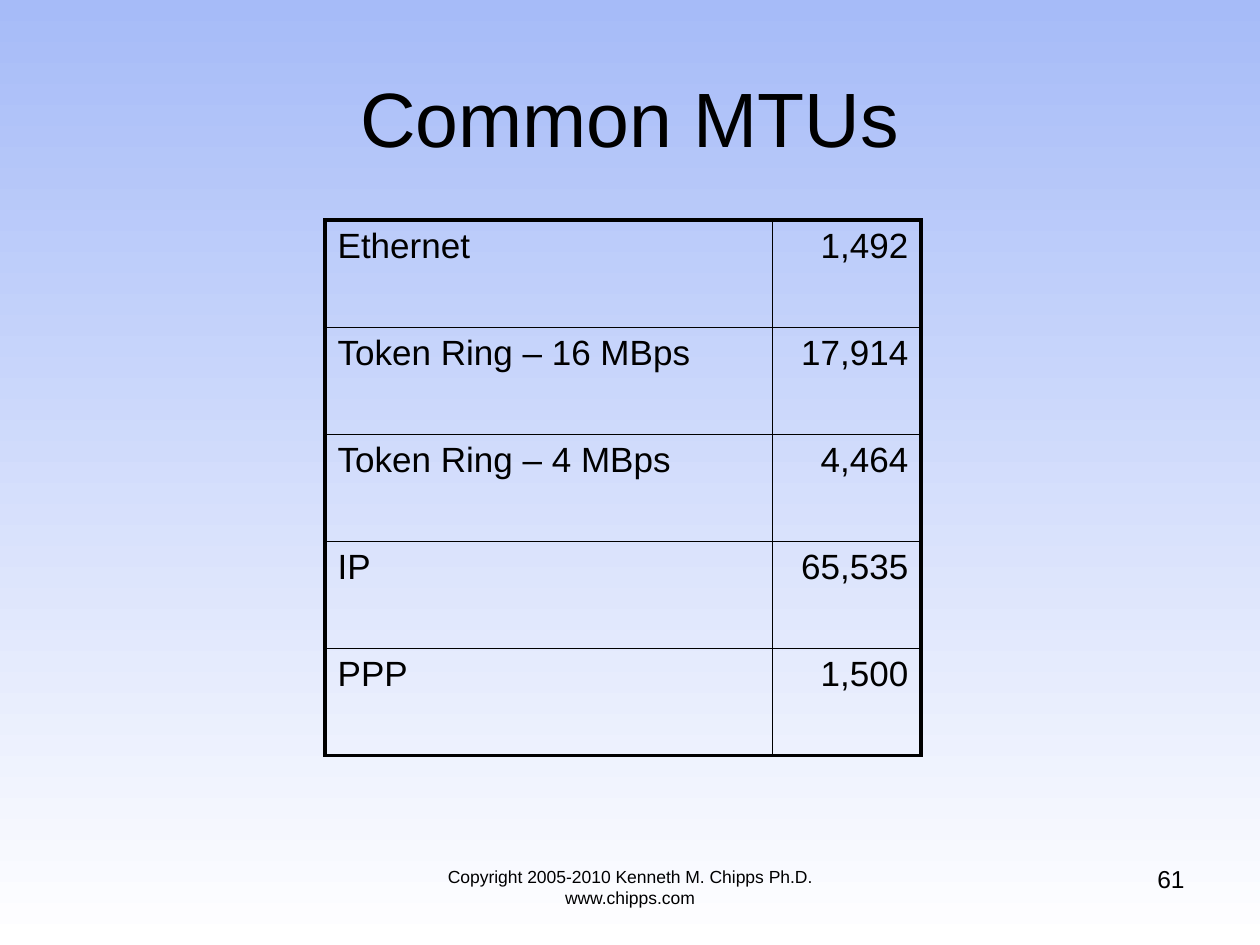
"""Build a slide with a bordered table of common MTU sizes."""
from typing import NamedTuple

from lxml.etree import SubElement as Sub
from pptx import Presentation
from pptx.dml.color import RGBColor as Rgb
from pptx.enum.text import MSO_ANCHOR as Anchor, MSO_AUTO_SIZE as Fit, PP_ALIGN as Align
from pptx.oxml.ns import qn
from pptx.util import Inches, Pt

COLORS = {"ink": "000000", "sky": "A6BBF8", "base": "FFFFFF"}
WIDE, HIGH = Inches(10), Inches(7.5)
THICK, THIN = 2.25, 1
COLS = (3.55, 1.18)
ROW = 0.85


class Box(NamedTuple):
    """Hold a frame as shares of the slide's size."""
    left: float
    top: float
    width: float
    height: float

    def size(self) -> tuple[int, ...]:
        return tuple(round(share * full) for share, full in zip(self, (WIDE, HIGH) * 2))


class Mtu(NamedTuple):
    """Pair a link type with its largest packet."""
    link: str
    bytes: str


class Note(NamedTuple):
    """Describe a line at the foot of the slide."""
    text: str
    box: Box
    size: int
    align: Align


MTUS = (
    Mtu("Ethernet", "1,492"),
    Mtu("Token Ring – 16 MBps", "17,914"),
    Mtu("Token Ring – 4 MBps", "4,464"),
    Mtu("IP", "65,535"),
    Mtu("PPP", "1,500"),
)
NOTES = (
    Note("Copyright 2005-2010 Kenneth M. Chipps Ph.D. www.chipps.com",
         Box(0.3, 0.91, 0.4, 0.07), 10, Align.CENTER),
    Note("61", Box(0.717, 0.908, 0.233, 0.07), 14, Align.RIGHT),
)


def write(frame, text: str, *, size: int, align=Align.LEFT, before: float = 0) -> None:
    """Put formatted text in a frame."""
    frame.word_wrap = True
    para = frame.paragraphs[0]
    para.alignment, para.space_before = align, Pt(before)
    run = para.add_run()
    run.text = text
    run.font.size, run.font.name = Pt(size), "Arial"
    run.font.color.rgb = Rgb.from_string(COLORS["ink"])


def edge(cell, side: str, width: float) -> None:
    """Draw one border of a cell."""
    line = Sub(cell._tc.get_or_add_tcPr(), qn(f"a:ln{side}"), w=str(Pt(width)))
    Sub(Sub(line, qn("a:solidFill")), qn("a:srgbClr"), val=COLORS["ink"])


def shade(slide) -> None:
    """Fill the background from sky down to base."""
    fill = slide.background.fill
    fill.gradient()
    fill.gradient_angle = 270
    for stop, name, place in zip(fill.gradient_stops, ("sky", "base"), (0, 1)):
        stop.color.rgb = Rgb.from_string(COLORS[name])
        stop.position = place


def head(slide, text: str, box: Box) -> None:
    """Place and format the title."""
    title = slide.shapes.title
    title.left, title.top, title.width, title.height = box.size()
    frame = title.text_frame
    frame.auto_size, frame.vertical_anchor = Fit.NONE, Anchor.MIDDLE
    write(frame, text, size=44, align=Align.CENTER)


def grid(slide, data: tuple[Mtu, ...], left: float, top: float) -> None:
    """Draw the table with a thick outer frame."""
    rows, cols = len(data), len(COLS)
    table = slide.shapes.add_table(
        rows, cols, round(left * WIDE), round(top * HIGH),
        Inches(sum(COLS)), Inches(ROW * rows)).table
    table.first_row = table.horz_banding = False
    for col, width in zip(table.columns, COLS):
        col.width = Inches(width)
    for r, mtu in enumerate(data):
        table.rows[r].height = Inches(ROW)
        for c, text in enumerate(mtu):
            cell = table.cell(r, c)
            outer = {"L": c == 0, "R": c == cols - 1, "T": r == 0, "B": r == rows - 1}
            for side, rim in outer.items():
                edge(cell, side, THICK if rim else THIN)
            cell.fill.background()
            write(cell.text_frame, text, size=20, before=4,
                  align=Align.RIGHT if c else Align.LEFT)


def foot(slide, note: Note) -> None:
    """Add a line at the foot of the slide."""
    frame = slide.shapes.add_textbox(*note.box.size()).text_frame
    write(frame, note.text, size=note.size, align=note.align)


def main() -> None:
    """Build and save the slide."""
    deck = Presentation()
    deck.slide_width, deck.slide_height = WIDE, HIGH
    slide = deck.slides.add_slide(deck.slide_layouts[5])
    shade(slide)
    head(slide, "Common MTUs", Box(0.05, 0.04, 0.9, 0.167))
    grid(slide, MTUS, 0.258, 0.233)
    for note in NOTES:
        foot(slide, note)
    deck.save("out.pptx")


if __name__ == "__main__":
    main()
